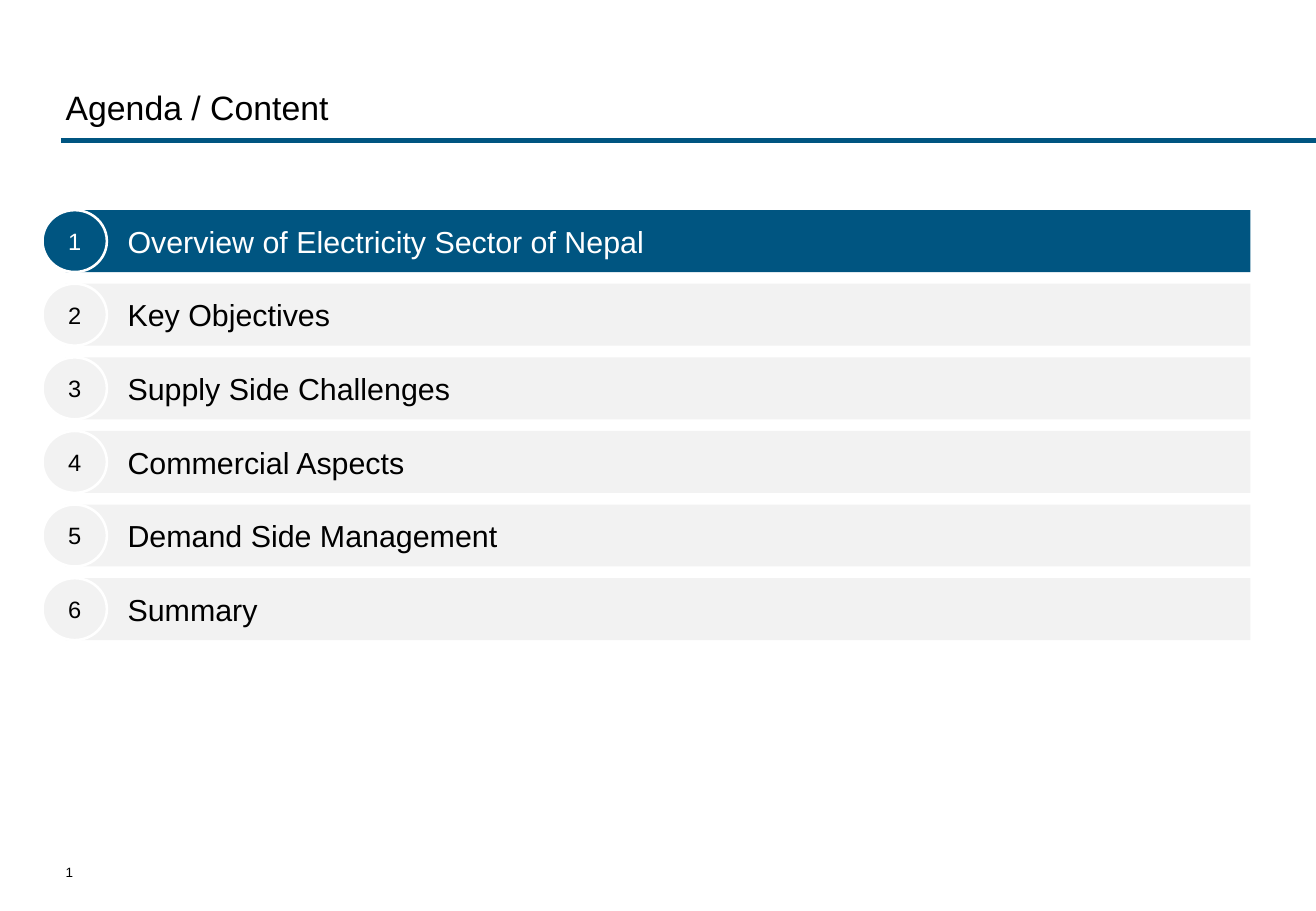
from lxml import etree
from pptx import Presentation
from pptx.dml.color import RGBColor
from pptx.enum.shapes import MSO_CONNECTOR, MSO_SHAPE
from pptx.enum.text import MSO_ANCHOR, MSO_AUTO_SIZE, PP_ALIGN
from pptx.oxml.ns import qn
from pptx.util import Inches, Pt

RECT, OVAL = MSO_SHAPE.RECTANGLE, MSO_SHAPE.OVAL
LINE = MSO_CONNECTOR.STRAIGHT
MIDDLE, BOTTOM = MSO_ANCHOR.MIDDLE, MSO_ANCHOR.BOTTOM
LEFT, CENTER = PP_ALIGN.LEFT, PP_ALIGN.CENTER

# Content
TITLE = "Agenda / Content"
PAGE = "1"
TOPICS = [
    "Overview of Electricity Sector of Nepal",
    "Key Objectives",
    "Supply Side Challenges",
    "Commercial Aspects",
    "Demand Side Management",
    "Summary",
]
ACTIVE = 0

# Style and grid, in inches
FONT = "Arial"
COLORS = {"blue": "005581", "gray": "F2F2F2", "white": "FFFFFF", "black": "000000"}
WIDTH, HEIGHT = 10.83, 7.5
MARGIN = 0.54
BODY = WIDTH - 2 * MARGIN
FIRST, LAST = 1.73, 4.76
PITCH = (LAST - FIRST) / (len(TOPICS) - 1)
BAR = 0.51
BADGE_X, BADGE_W = 0.35, 0.53
RULE_X, RULE_Y = 0.5, 1.16
PAD = 0.06


def color(name):
    return RGBColor.from_string(COLORS[name])


def write(shape, text, size, ink, anchor=BOTTOM, align=LEFT, pad=0, indent=0):
    frame = shape.text_frame
    frame.text = text
    frame.word_wrap = True
    frame.auto_size = MSO_AUTO_SIZE.NONE
    frame.vertical_anchor = anchor
    frame.margin_left = Inches(indent or pad)
    frame.margin_right = frame.margin_top = frame.margin_bottom = Inches(pad)
    para = frame.paragraphs[0]
    para.alignment = align
    font = para.runs[0].font
    font.name, font.size = FONT, Pt(size)
    font.color.rgb = color(ink)


def block(slide, kind, x, y, w, fill):
    shape = slide.shapes.add_shape(kind, Inches(x), Inches(y), Inches(w), Inches(BAR))
    shape.shadow.inherit = False
    shape.fill.solid()
    shape.fill.fore_color.rgb = color(fill)
    shape.line.fill.background()
    return shape


def main():
    deck = Presentation()
    deck.slide_width, deck.slide_height = Inches(WIDTH), Inches(HEIGHT)
    slide = deck.slides.add_slide(deck.slide_layouts[5])

    # Title and rule
    title = slide.shapes.title
    title.left, title.top = Inches(MARGIN), Inches(0.61)
    title.width, title.height = Inches(BODY), Inches(0.44)
    write(title, TITLE, 20, "black")
    rule = slide.shapes.add_connector(
        LINE, Inches(RULE_X), Inches(RULE_Y), Inches(WIDTH), Inches(RULE_Y))
    rule.line.color.rgb = color("blue")
    rule.line.width = Pt(3)
    etree.SubElement(rule.line._get_or_add_ln().getparent(), qn("a:effectLst"))

    # Page number
    page = slide.shapes.add_textbox(
        Inches(MARGIN), Inches(7.01), Inches(0.33), Inches(0.24))
    write(page, PAGE, 8, "black")

    # Agenda rows
    for row, topic in enumerate(TOPICS):
        y = FIRST + row * PITCH
        fill, ink = ("blue", "white") if row == ACTIVE else ("gray", "black")
        bar = block(slide, RECT, MARGIN, y, BODY, fill)
        write(bar, topic, 18, ink, MIDDLE, pad=PAD, indent=BAR)
        badge = block(slide, OVAL, BADGE_X, y, BADGE_W, fill)
        badge.line.color.rgb = color("white")
        badge.line.width = Pt(1.5)
        write(badge, str(row + 1), 14, ink, MIDDLE, CENTER, PAD)

    deck.save("out.pptx")


if __name__ == "__main__":
    main()
